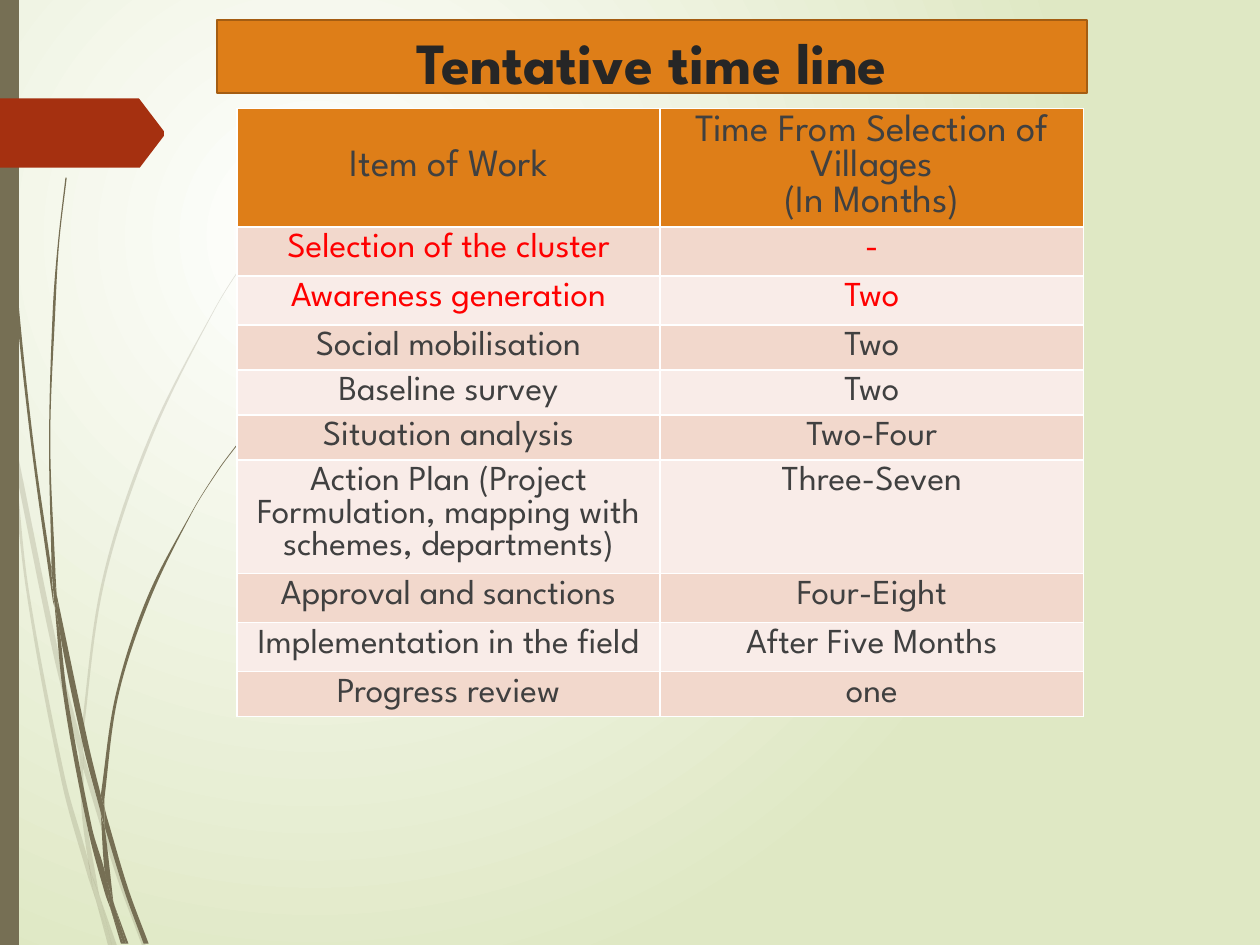
from math import dist

from lxml.etree import SubElement
from pptx import Presentation
from pptx.dml.color import RGBColor
from pptx.enum.shapes import MSO_SHAPE
from pptx.enum.text import MSO_ANCHOR, PP_ALIGN
from pptx.oxml import parse_xml
from pptx.oxml.ns import nsdecls, qn
from pptx.util import Inches, Pt

FONT = "League Spartan"
WHITE = RGBColor(0xFF, 0xFF, 0xFF)
PALE_GREEN = RGBColor(0xDF, 0xE8, 0xC4)
OLIVE = RGBColor(0x76, 0x6F, 0x54)
RUST = RGBColor(0xA5, 0x30, 0x10)
ORANGE = RGBColor(0xDE, 0x7E, 0x18)
BROWN = RGBColor(0xA4, 0x5D, 0x12)
INK = RGBColor(0x26, 0x26, 0x26)
GREY = RGBColor(0x40, 0x40, 0x40)
RED = RGBColor(0xFF, 0x00, 0x00)
BANDS = (RGBColor(0xF2, 0xD8, 0xCC), RGBColor(0xF9, 0xEC, 0xE8))

# The slide is a grid of 10 columns by 7.5 rows
COLS, ROWS = 10, 7.5
CELL = Inches(1)

# Each blade of grass is a pair of edges, given as (column, row) points
FAINT_BLADES = [
    ([(.08, 3.5), (.06, 3.22), (0, 2.82)], [(0, 2.99), (.08, 3.44)]),
    ([(.11, 3.45), (.47, 5.2), (.64, 5.86)],
     [(.63, 5.99), (.43, 5.22), (.13, 3.76)]),
    ([(.66, 5.96), (.69, 6.07), (.95, 6.92), (1.16, 7.51)],
     [(1.13, 7.51), (.92, 6.94), (.66, 6.1)]),
    ([(.89, 7.51), (.79, 7.11)], [(.93, 7.51)]),
    ([(.08, 3.5), (.21, 4.7), (.49, 6.21), (.69, 6.93), (.76, 7.14)],
     [(.74, 7.07), (.7, 6.83), (.52, 6.19), (.23, 4.69), (.13, 3.76)]),
    ([(.63, 5.99), (.65, 6.46), (.7, 6.83), (.72, 6.92), (.79, 7.11)],
     [(.78, 7.06), (.68, 6.46), (.66, 6.1), (.66, 6.08)]),
    ([(.66, 5.96), (.66, 5.84), (.83, 4.62), (1.2, 3.49), (1.71, 2.45),
      (2.01, 1.98), (2.17, 1.75), (2.34, 1.54)],
     [(2.34, 1.53), (2.17, 1.75), (2.01, 1.97), (1.71, 2.44), (1.18, 3.48),
      (.81, 4.61), (.64, 5.84), (.64, 5.86)]),
    ([(.76, 7.14), (.86, 7.51)], [(.89, 7.51)]),
    ([(.66, 6.1), (.66, 5.96), (.64, 5.86)], [(.63, 5.99), (.66, 6.08)]),
    ([(.7, 6.83), (.74, 7.07), (.76, 7.14), (.89, 7.51)],
     [(.79, 7.11), (.72, 6.92)]),
]
SOLID_BLADES = [
    ([(.02, 0), (.03, .48), (.05, 1.1), (.12, 2.33), (.25, 3.55), (.42, 4.77),
      (.43, 4.81)],
     [(.41, 4.57), (.41, 4.53), (.27, 3.55), (.14, 2.32), (.06, 1.09),
      (.03, .48), (.03, 0)]),
    ([(.45, 4.72), (.48, 5.05), (.66, 5.92), (.8, 6.45)],
     [(.8, 6.31), (.7, 5.9), (.45, 4.72)]),
    ([(.83, 6.41), (.85, 6.49), (1.02, 7.06), (1.18, 7.49)],
     [(1.14, 7.49), (.99, 7.08), (.83, 6.56)]),
    ([(.43, 4.77), (.51, 5.57), (.7, 6.59), (.83, 7.08), (.88, 7.22)],
     [(.87, 7.17), (.83, 6.91), (.73, 6.57), (.54, 5.56), (.48, 5.05)]),
    ([(.45, 4.72), (.44, 4.53), (.4, 3.49), (.44, 2.45), (.47, 1.93),
      (.53, 1.41)],
     [(.52, 1.41), (.46, 1.93), (.42, 2.45), (.39, 3.49), (.41, 4.49)]),
    ([(1, 7.49), (.91, 7.19)], [(1.02, 7.49)]),
    ([(.43, 4.77), (.48, 5.05)], [(.45, 4.72), (.41, 4.49), (.41, 4.53)]),
    ([(.83, 6.41), (.83, 6.33), (.94, 5.52), (1.19, 4.76), (1.53, 4.06),
      (1.73, 3.74), (1.84, 3.59), (1.96, 3.44)],
     [(1.95, 3.44), (1.84, 3.58), (1.73, 3.73), (1.53, 4.05), (1.17, 4.74),
      (.92, 5.51), (.8, 6.31)]),
    ([(.88, 7.22), (.96, 7.49)], [(.98, 7.49)]),
    ([(.8, 6.45), (.83, 6.91), (.87, 7.06), (.91, 7.19)],
     [(.9, 7.16), (.83, 6.56), (.81, 6.51)]),
    ([(.8, 6.45), (.83, 6.56)], [(.83, 6.41), (.8, 6.31)]),
    ([(.83, 6.91), (.87, 7.17), (.88, 7.22), (.98, 7.49)],
     [(1, 7.49), (.91, 7.19), (.87, 7.06)]),
]
SIGNPOST = [(0, .78), (1.1, .78), (1.11, .79), (1.3, 1.04), (1.3, 1.08),
            (1.11, 1.33), (0, 1.33)]

HEADER = (["Item of Work"],
          ["Time From Selection of Villages", "(In Months)"])
HEADER_ROW, TALL_ROW, SHORT_ROW, PLAN_ROW = .56, .39, .22, .9
# Item, time, least row height, text colour
TASKS = [
    ("Selection of the cluster", "-", TALL_ROW, RED),
    ("Awareness generation", "Two", TALL_ROW, RED),
    ("Social mobilisation", "Two", SHORT_ROW, GREY),
    ("Baseline survey", "Two", SHORT_ROW, GREY),
    ("Situation analysis", "Two-Four", SHORT_ROW, GREY),
    ("Action Plan (Project Formulation, mapping with schemes, departments)",
     "Three-Seven", PLAN_ROW, GREY),
    ("Approval and sanctions", "Four-Eight", TALL_ROW, GREY),
    ("Implementation in the field", "After Five Months", TALL_ROW, GREY),
    ("Progress review", "one", SHORT_ROW, GREY),
]


def grid(*cells):
    return [round(c * CELL) for c in cells]


def smooth(points):
    """Points with two Bezier handles put between each pair."""
    ends = [points[0], *points, points[-1]]
    curve = [points[0]]
    for a, b, c, d in zip(ends, ends[1:], ends[2:], ends[3:]):
        third = dist(b, c) / 3
        out, back = third / dist(a, c), third / dist(b, d)
        curve += [(b[0] + (c[0] - a[0]) * out, b[1] + (c[1] - a[1]) * out),
                  (c[0] - (d[0] - b[0]) * back, c[1] - (d[1] - b[1]) * back),
                  c]
    return curve


def paint(sp, color, alpha=None):
    sp.shadow.inherit = False
    sp.fill.solid()
    sp.fill.fore_color.rgb = color
    sp.line.fill.background()
    if alpha:
        clr = sp._element.spPr.find(qn("a:solidFill"))[0]
        SubElement(clr, qn("a:alpha")).set("val", str(alpha * 1000))


def add_outline(shapes, points, color, alpha=None):
    pts = [grid(*p) for p in points]
    builder = shapes.build_freeform(*pts[0])
    builder.add_line_segments(pts[1:], close=True)
    sp = builder.convert_to_shape()
    paint(sp, color, alpha)
    return sp


def bend(lines):
    """Turn each three line segments into one cubic curve."""
    for first, second, third in zip(lines[::3], lines[1::3], lines[2::3]):
        curve = first.makeelement(qn("a:cubicBezTo"))
        first.addprevious(curve)
        for line in (first, second, third):
            curve.append(line[0])
            line.getparent().remove(line)


def add_grass(s, blades, alpha=None):
    group = s.shapes.add_group_shape()
    for near, far in blades:
        edges = smooth(near), smooth(far)
        sp = add_outline(group.shapes, sum(edges, []), OLIVE, alpha)
        lines = list(sp._element.iter(qn("a:lnTo")))
        turn = len(edges[0]) - 1
        bend(lines[:turn])
        bend(lines[turn + 1:])


def add_rect(s, x, y, w, h, color):
    sp = s.shapes.add_shape(MSO_SHAPE.RECTANGLE, *grid(x, y, w, h))
    paint(sp, color)
    return sp


def write(p, text, size, color, bold=False):
    p.alignment = PP_ALIGN.CENTER
    r = p.add_run()
    r.text = text
    r.font.name, r.font.size, r.font.bold = FONT, Pt(size), bold
    r.font.color.rgb = color


def set_background(s):
    fill = s.background.fill
    fill.gradient()
    for stop, color in zip(fill.gradient_stops, (WHITE, PALE_GREEN)):
        stop.color.rgb = color
    grad = s._element.find(".//" + qn("a:gradFill"))
    grad.replace(grad.find(qn("a:lin")), parse_xml(
        f'<a:path {nsdecls("a")} path="circle"><a:fillToRect l="50000" '
        't="50000" r="100000" b="100000"/></a:path>'))


def add_title(s):
    sp = add_rect(s, 1.72, .16, 6.91, .58, ORANGE)
    sp.line.color.rgb, sp.line.width = BROWN, Pt(1.25)
    tf = sp.text_frame
    tf.word_wrap, tf.vertical_anchor = True, MSO_ANCHOR.TOP
    p = tf.paragraphs[0]
    p.space_before = Pt(10)
    write(p, "Tentative time line", 33.3, INK, bold=True)


def fill_cell(cell, lines, size, color, fill):
    cell.margin_left = cell.margin_right = Inches(.07)
    cell.margin_top = cell.margin_bottom = Inches(.05)
    cell.fill.solid()
    cell.fill.fore_color.rgb = fill
    tf = cell.text_frame
    for i, text in enumerate(lines):
        write(tf.add_paragraph() if i else tf.paragraphs[0], text, size, color)


def add_timeline(s):
    heights = [HEADER_ROW] + [task[2] for task in TASKS]
    frame = s.shapes.add_table(len(heights), 2, *grid(1.88, .86, 6.72, 6.43))
    table = frame.table
    table.first_row = table.horz_banding = False
    for row, height in zip(table.rows, heights):
        row.height = Inches(height)
    for col, lines in enumerate(HEADER):
        fill_cell(table.cell(0, col), lines, 22, GREY, ORANGE)
    table.cell(0, 0).vertical_anchor = MSO_ANCHOR.MIDDLE
    for i, (item, time, _, color) in enumerate(TASKS):
        for col, text in enumerate((item, time)):
            fill_cell(table.cell(i + 1, col), [text], 20, color, BANDS[i % 2])


def main():
    prs = Presentation()
    prs.slide_width, prs.slide_height = grid(COLS, ROWS)
    s = prs.slides.add_slide(prs.slide_layouts[6])
    # Backdrop
    set_background(s)
    add_grass(s, FAINT_BLADES, alpha=20)
    add_grass(s, SOLID_BLADES)
    add_rect(s, 0, 0, .15, ROWS, OLIVE)
    add_outline(s.shapes, SIGNPOST, RUST)
    # Content
    add_title(s)
    add_timeline(s)
    prs.save("out.pptx")


if __name__ == "__main__":
    main()
